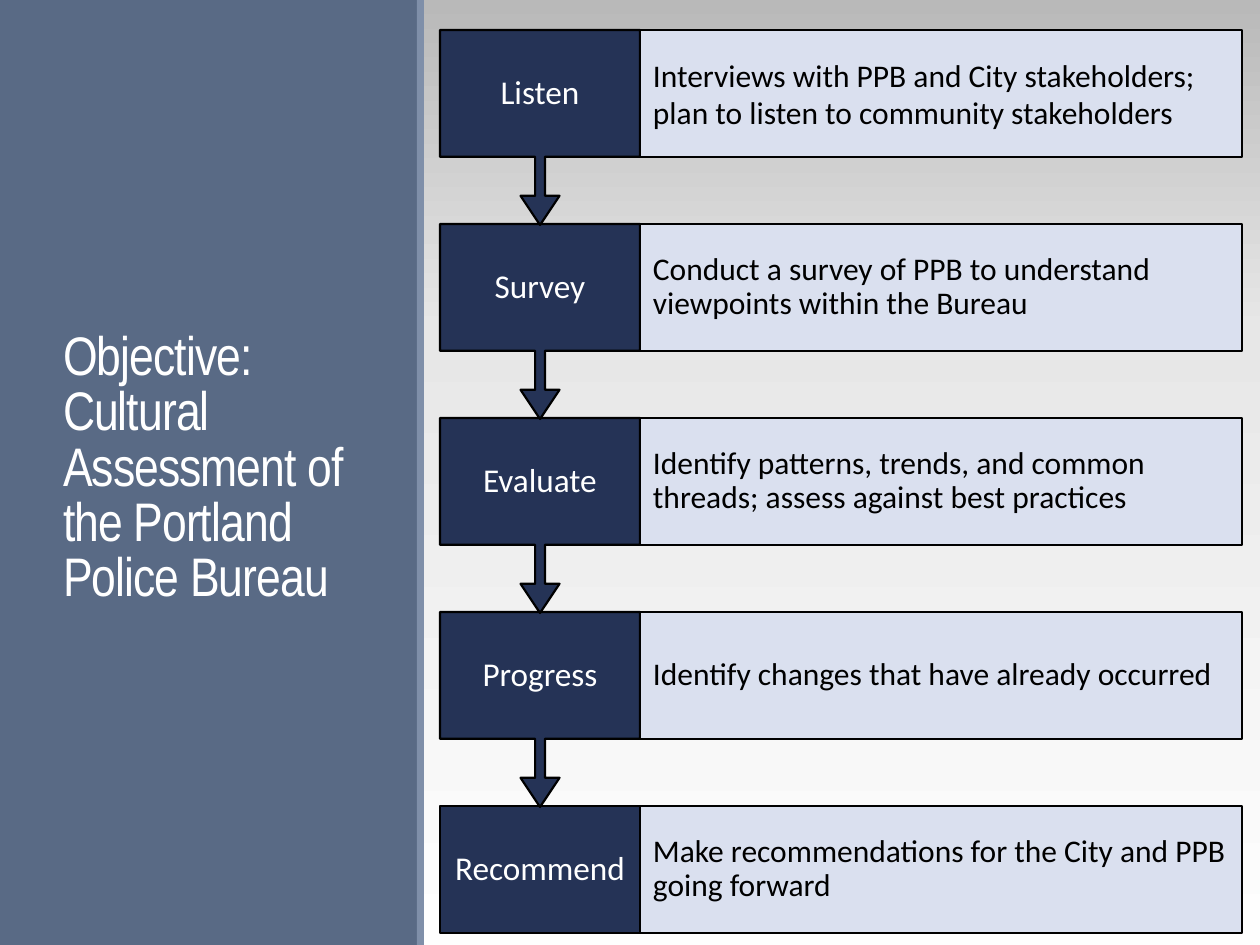
from copy import deepcopy
from pptx import Presentation, util as u
from pptx.dml.color import RGBColor
from pptx.enum import shapes, text
from pptx.oxml import ns

PX = 914400 / 126
LEFT, TOP, STEP = 440, 30, 194
LABEL_WIDTH, DETAIL_WIDTH, HEIGHT = 200, 602, 127
CALLOUT_HEIGHT = 195


def color(value):
    return RGBColor.from_string(value)


def write(shape, content, size, font, fill, align=text.PP_ALIGN.LEFT,
          spacing=0.9, inset_x=13, inset_y=6, tracking=0):
    frame = shape.text_frame
    frame.word_wrap = True
    frame.auto_size = text.MSO_AUTO_SIZE.NONE
    frame.vertical_anchor = text.MSO_ANCHOR.MIDDLE
    frame.margin_left = frame.margin_right = round(inset_x * PX)
    frame.margin_top = frame.margin_bottom = round(inset_y * PX)
    paragraph = frame.paragraphs[0]
    paragraph.alignment = align
    paragraph.line_spacing = spacing
    run = paragraph.add_run()
    run.text = content
    run.font.size = u.Pt(size)
    run.font.name = font
    run.font.color.rgb = color(fill)
    if tracking:
        run.font._element.set("spc", str(tracking))


presentation = Presentation()
presentation.slide_width = u.Inches(10)
presentation.slide_height = u.Inches(7.5)
slide = presentation.slides.add_slide(presentation.slide_layouts[5])

backdrop = slide.shapes.add_shape(
    shapes.MSO_SHAPE.RECTANGLE, 0, 0,
    presentation.slide_width, presentation.slide_height)
backdrop.shadow.inherit = False
backdrop.line.fill.background()
backdrop.fill.gradient()
backdrop.fill.gradient_angle = 90
stop_list = backdrop.element.find(".//" + ns.qn("a:gsLst"))
stop_list.append(deepcopy(stop_list[-1]))
stops = [(0, "FEFEFE"), (0.65, "E7E7E7"), (1, "B9B9B9")]
for stop, (position, fill) in zip(backdrop.fill.gradient_stops, stops):
    stop.position = position
    stop.color.rgb = color(fill)

for left, width, fill in [(0, 418, "596A85"), (417, 7, "7F8FA9")]:
    panel = slide.shapes.add_shape(
        shapes.MSO_SHAPE.RECTANGLE, round(left * PX), 0,
        round(width * PX), presentation.slide_height)
    panel.shadow.inherit = False
    panel.line.fill.background()
    panel.fill.solid()
    panel.fill.fore_color.rgb = color(fill)

title = slide.shapes.title
title.left, title.top, title.width, title.height = (
    round(length * PX) for length in (50, 72, 319, 795))
panel.element.addnext(title.element)
write(title, "Objective: Cultural Assessment of the Portland Police Bureau",
      31, "Arial Narrow", "FFFFFF", spacing=0.85, tracking=-50)

steps = [
    ("Listen", "Interviews with PPB and City stakeholders; "
               "plan to listen to community stakeholders"),
    ("Survey", "Conduct a survey of PPB to understand "
               "viewpoints within the Bureau"),
    ("Evaluate", "Identify patterns, trends, and common threads; "
                 "assess against best practices"),
    ("Progress", "Identify changes that have already occurred"),
    ("Recommend", "Make recommendations for the City and PPB going forward"),
]
for index, (name, description) in reversed(list(enumerate(steps))):
    last = index == len(steps) - 1
    top = round((TOP + index * STEP) * PX)
    left, label_width = round(LEFT * PX), round(LABEL_WIDTH * PX)
    height = round(HEIGHT * PX)

    step = slide.shapes.add_shape(
        shapes.MSO_SHAPE.RECTANGLE if last else shapes.MSO_SHAPE.UP_ARROW_CALLOUT,
        left, top, label_width, height if last else round(CALLOUT_HEIGHT * PX))
    if not last:
        step.rotation = 180
        for position, value in enumerate([0.05, 0.1, 0.15, 0.65]):
            step.adjustments[position] = value
    detail = slide.shapes.add_shape(
        shapes.MSO_SHAPE.RECTANGLE, left + label_width, top,
        round(DETAIL_WIDTH * PX), height)
    for box, fill in [(step, "253356"), (detail, "DAE0EF")]:
        box.shadow.inherit = False
        box.fill.solid()
        box.fill.fore_color.rgb = color(fill)
        box.line.color.rgb = color("000000")
        box.line.width = u.Pt(1.25)

    label = slide.shapes.add_textbox(left, top, label_width, height)
    write(label, name, 19, "Calibri", "FFFFFF",
          align=text.PP_ALIGN.CENTER, inset_x=14, inset_y=19)
    write(detail, description, 18, "Calibri", "000000",
          spacing=0.9 if index else 1.0, inset_y=32)

presentation.save("out.pptx")
